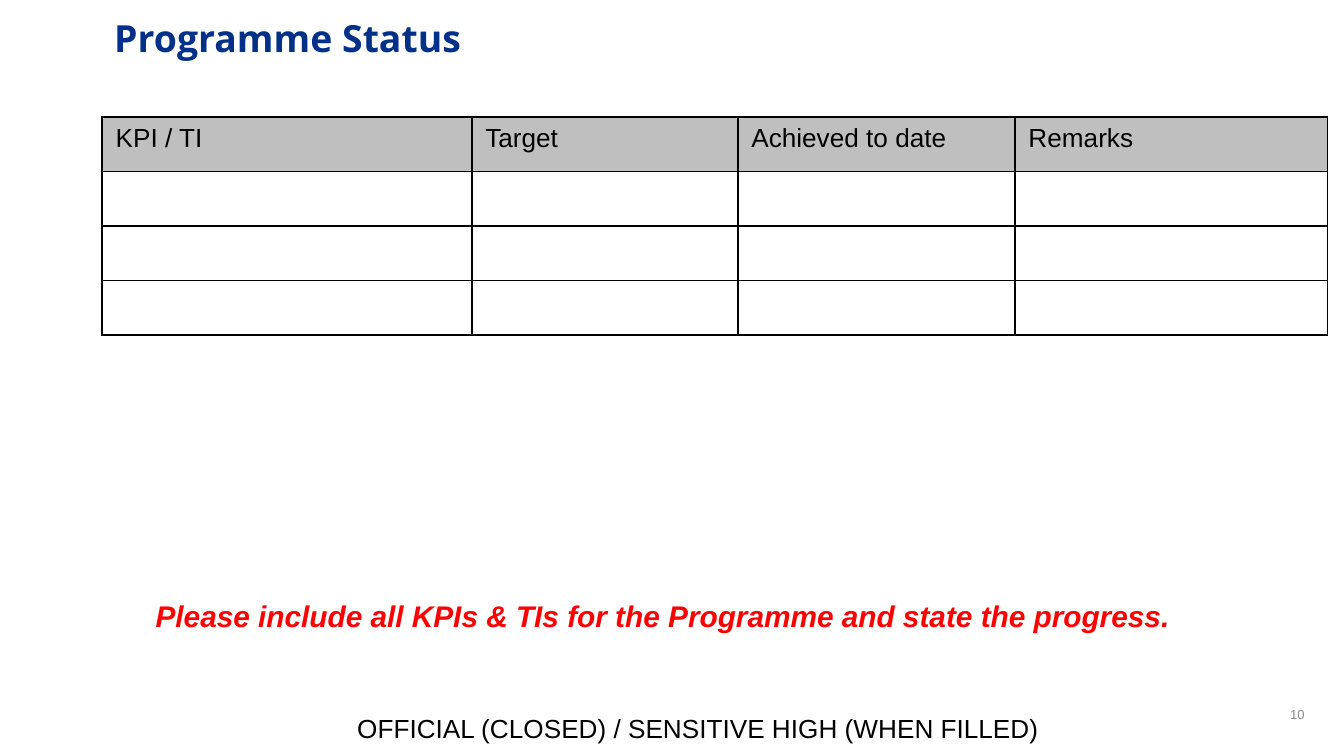
import pptx
import pptx.dml.color
import pptx.enum.text
import pptx.oxml
import pptx.oxml.ns
import pptx.util

Pt = pptx.util.Pt
ANCHOR = pptx.enum.text.MSO_ANCHOR
ALIGN = pptx.enum.text.PP_ALIGN

COLORS = {
    "title": "003087",
    "text": "000000",
    "note": "FF0000",
    "number": "8C8C8C",
    "header": "BFBFBF",
    "border": "000000",
}
FORMATS = {
    "title": {"name": "Open Sans", "size": Pt(20), "bold": True},
    "text": {"name": "Arial", "size": Pt(14)},
    "note": {"name": "Arial", "size": Pt(16), "bold": True, "italic": True},
    "number": {"name": "Arial", "size": Pt(7)},
}
HEADERS = ["KPI / TI", "Target", "Achieved to date", "Remarks"]
COLUMN_WIDTHS = [198, 142.5, 148.5, 167.5]
ROW_COUNT = 4


def rgb(key):
    """Return the named colour."""
    return pptx.dml.color.RGBColor.from_string(COLORS[key])


def write(tf, text, style, align=ALIGN.LEFT):
    """Write one formatted line into a text frame."""
    p = tf.paragraphs[0]
    p.alignment = align
    r = p.add_run()
    r.text = text
    for name, value in FORMATS[style].items():
        setattr(r.font, name, value)
    r.font.color.rgb = rgb(style)


def add_title(s, box, text):
    """Place and format the title placeholder."""
    sp = s.shapes.title
    sp.left, sp.top, sp.width, sp.height = map(Pt, box)
    tf = sp.text_frame
    tf.word_wrap = True
    tf.vertical_anchor = ANCHOR.TOP
    tf.auto_size = pptx.enum.text.MSO_AUTO_SIZE.NONE
    write(tf, text, "title")


def add_text(s, box, text, style, align=ALIGN.LEFT, anchor=ANCHOR.TOP):
    """Add a wrapped text box."""
    tf = s.shapes.add_textbox(*map(Pt, box)).text_frame
    tf.word_wrap = True
    tf.vertical_anchor = anchor
    write(tf, text, style, align)


def add_borders(cell):
    """Draw a thin line on every side of a cell."""
    tcPr = cell._tc.get_or_add_tcPr()
    ns = pptx.oxml.ns.nsdecls("a")
    for i, side in enumerate(["lnL", "lnR", "lnT", "lnB"]):
        line = pptx.oxml.parse_xml(
            f'<a:{side} {ns} w="{Pt(1)}"><a:solidFill>'
            f'<a:srgbClr val="{COLORS["border"]}"/></a:solidFill></a:{side}>'
        )
        tcPr.insert(i, line)


def add_kpi_table(s, box):
    """Add the KPI table with a shaded header and blank rows."""
    shape = s.shapes.add_table(ROW_COUNT, len(HEADERS), *map(Pt, box))
    table = shape.table
    table.horz_banding = False
    for column, width in zip(table.columns, COLUMN_WIDTHS):
        column.width = Pt(width)
    for row in table.rows:
        row.height = Pt(box[3] / ROW_COUNT)
    for cell in table.iter_cells():
        cell.fill.background()
        add_borders(cell)
    for cell, header in zip(table.rows[0].cells, HEADERS):
        cell.fill.solid()
        cell.fill.fore_color.rgb = rgb("header")
        write(cell.text_frame, header, "text")
        cell.text_frame.paragraphs[0].runs[0].font.bold = False


def main():
    """Build the programme status slide."""
    prs = pptx.Presentation()
    prs.slide_width, prs.slide_height = Pt(720), Pt(405)
    s = prs.slides.add_slide(prs.slide_layouts[5])
    add_text(s, (538, 372, 168, 21.5), "10", "number", ALIGN.RIGHT, ANCHOR.MIDDLE)
    add_text(s, (184.3, 378, 391, 24.5),
             "OFFICIAL (CLOSED) / SENSITIVE HIGH (WHEN FILLED)", "text")
    add_title(s, (54, 4.3, 623.5, 57), "Programme Status")
    add_kpi_table(s, (54.8, 62.7, sum(COLUMN_WIDTHS), 117))
    add_text(s, (76.3, 316.8, 573, 26.6),
             "Please include all KPIs & TIs for the Programme and state the progress.",
             "note")
    prs.save("out.pptx")


if __name__ == "__main__":
    main()
